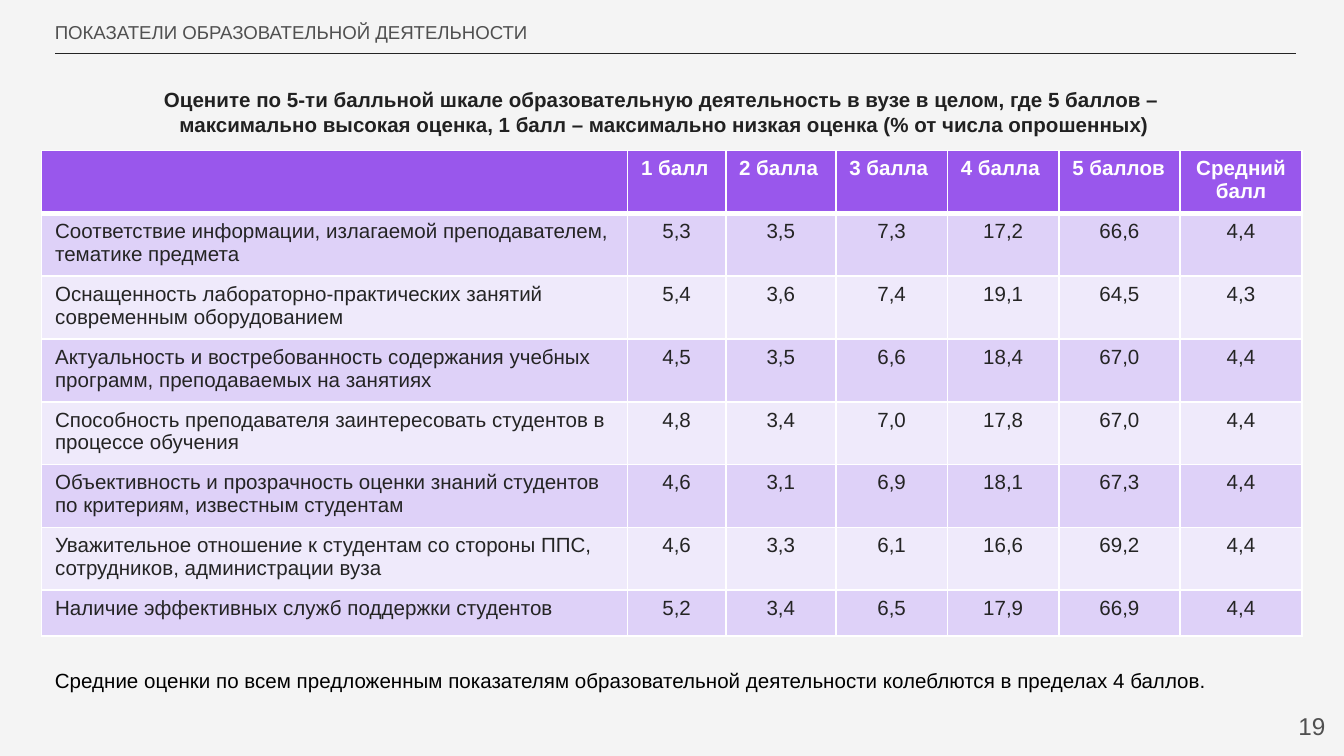
from dataclasses import dataclass

from lxml.etree import SubElement
from pptx import Presentation
from pptx.dml.color import RGBColor
from pptx.enum.shapes import MSO_CONNECTOR
from pptx.enum.text import MSO_ANCHOR, PP_ALIGN
from pptx.oxml.ns import qn
from pptx.util import Inches, Pt

LEFT, MID, RIGHT = PP_ALIGN.LEFT, PP_ALIGN.CENTER, PP_ALIGN.RIGHT


@dataclass
class Label:
    box: tuple[float, float, float, float]
    lines: list[str]
    size: float
    color: str
    align: PP_ALIGN = LEFT
    bold: bool = False
    inset: float = 0.1
    anchor: MSO_ANCHOR = MSO_ANCHOR.TOP


@dataclass
class Row:
    name: str
    marks: str


LABELS = [
    Label((9.36, 5.19, 0.6, 0.43), ["19"], 13, "505050", RIGHT),
    Label((0.31, 0.55, 9.27, 0.57), [
        "Оцените по 5-ти балльной шкале образовательную деятельность в вузе в целом, где 5 баллов – ",
        "максимально высокая оценка, 1 балл – максимально низкая оценка (% от числа опрошенных)",
    ], 11, "212121", MID, True),
    Label((0.31, 0.07, 4.33, 0.37), ["ПОКАЗАТЕЛИ ОБРАЗОВАТЕЛЬНОЙ ДЕЯТЕЛЬНОСТИ"], 10, "505050"),
    Label((0.31, 4.73, 9.39, 0.47), [
        "Средние оценки по всем предложенным показателям образовательной деятельности "
        "колеблются в пределах 4 баллов.",
    ], 11, "000000", inset=0.05, anchor=MSO_ANCHOR.BOTTOM),
]

HEADS = ["", "1 балл", "2 балла", "3 балла", "4 балла", "5 баллов", "Средний балл"]
WIDTHS = [4.36, 0.73, 0.82, 0.83, 0.83, 0.9, 0.91]
ROWS = [
    Row("Соответствие информации, излагаемой преподавателем, тематике предмета",
        "5,3 3,5 7,3 17,2 66,6 4,4"),
    Row("Оснащенность лабораторно-практических занятий современным оборудованием",
        "5,4 3,6 7,4 19,1 64,5 4,3"),
    Row("Актуальность и востребованность содержания учебных программ, преподаваемых на занятиях",
        "4,5 3,5 6,6 18,4 67,0 4,4"),
    Row("Способность преподавателя заинтересовать студентов в процессе обучения",
        "4,8 3,4 7,0 17,8 67,0 4,4"),
    Row("Объективность и прозрачность оценки знаний студентов по критериям, известным студентам",
        "4,6 3,1 6,9 18,1 67,3 4,4"),
    Row("Уважительное отношение к студентам со стороны ППС, сотрудников, администрации вуза",
        "4,6 3,3 6,1 16,6 69,2 4,4"),
    Row("Наличие эффективных служб поддержки студентов",
        "5,2 3,4 6,5 17,9 66,9 4,4"),
]


def paint(color, code: str) -> None:
    color.rgb = RGBColor.from_string(code)


def style(para, size: float, code: str, bold: bool, align: PP_ALIGN) -> None:
    para.alignment = align
    para.font.name = "Arial"
    para.font.size = Pt(size)
    para.font.bold = bold
    paint(para.font.color, code)


def add_label(slide, label: Label) -> None:
    frame = slide.shapes.add_textbox(*map(Inches, label.box)).text_frame
    frame.word_wrap = True
    frame.vertical_anchor = label.anchor
    frame.margin_left = frame.margin_right = Inches(0.1)
    frame.margin_top = frame.margin_bottom = Inches(label.inset)
    frame.text = "\n".join(label.lines)
    for para in frame.paragraphs:
        style(para, label.size, label.color, label.bold, label.align)


def add_rule(slide) -> None:
    rule = slide.shapes.add_connector(
        MSO_CONNECTOR.STRAIGHT, Inches(0.41), Inches(0.4), Inches(9.64), Inches(0.4))
    rule.line.width = Pt(0.75)
    paint(rule.line.color, "242424")
    SubElement(rule._element.spPr, qn("a:effectLst"))


def add_edges(cell, top: float, bottom: float) -> None:
    props = cell._tc.get_or_add_tcPr()
    for side, width in zip("LRTB", (1, 1, top, bottom)):
        edge = SubElement(props, qn(f"a:ln{side}"), w=str(Pt(width)))
        fill = SubElement(edge, qn("a:solidFill"))
        SubElement(fill, qn("a:srgbClr"), val="FFFFFF")


def add_grid(slide) -> None:
    data = [HEADS] + [[row.name, *row.marks.split()] for row in ROWS]
    frame = slide.shapes.add_table(
        len(data), len(HEADS), Inches(0.31), Inches(1.12), Inches(9.39), Inches(3.61))
    table = frame.table
    for col, width in zip(table.columns, WIDTHS):
        col.width = Inches(width)
    for r, texts in enumerate(data):
        head = r == 0
        table.rows[r].height = Inches(0.34)
        back = "9957EC" if head else ("EFEAFB", "DED1F8")[r % 2]
        for c, text in enumerate(texts):
            cell = table.cell(r, c)
            add_edges(cell, 3 if r == 1 else 1, 3 if head else 1)
            cell.fill.solid()
            paint(cell.fill.fore_color, back)
            cell.text = text
            align = MID if c == len(HEADS) - 1 or (c and not head) else LEFT
            style(cell.text_frame.paragraphs[0], 11,
                  "FFFFFF" if head else "242424", head, align)
    frame.height = Inches(3.61)


def main() -> None:
    deck = Presentation()
    deck.slide_width, deck.slide_height = Inches(10), Inches(10 * 9 / 16)
    slide = deck.slides.add_slide(deck.slide_layouts[6])
    slide.background.fill.solid()
    paint(slide.background.fill.fore_color, "F4F4F4")
    add_rule(slide)
    for label in LABELS:
        add_label(slide, label)
    add_grid(slide)
    deck.save("out.pptx")


if __name__ == "__main__":
    main()
